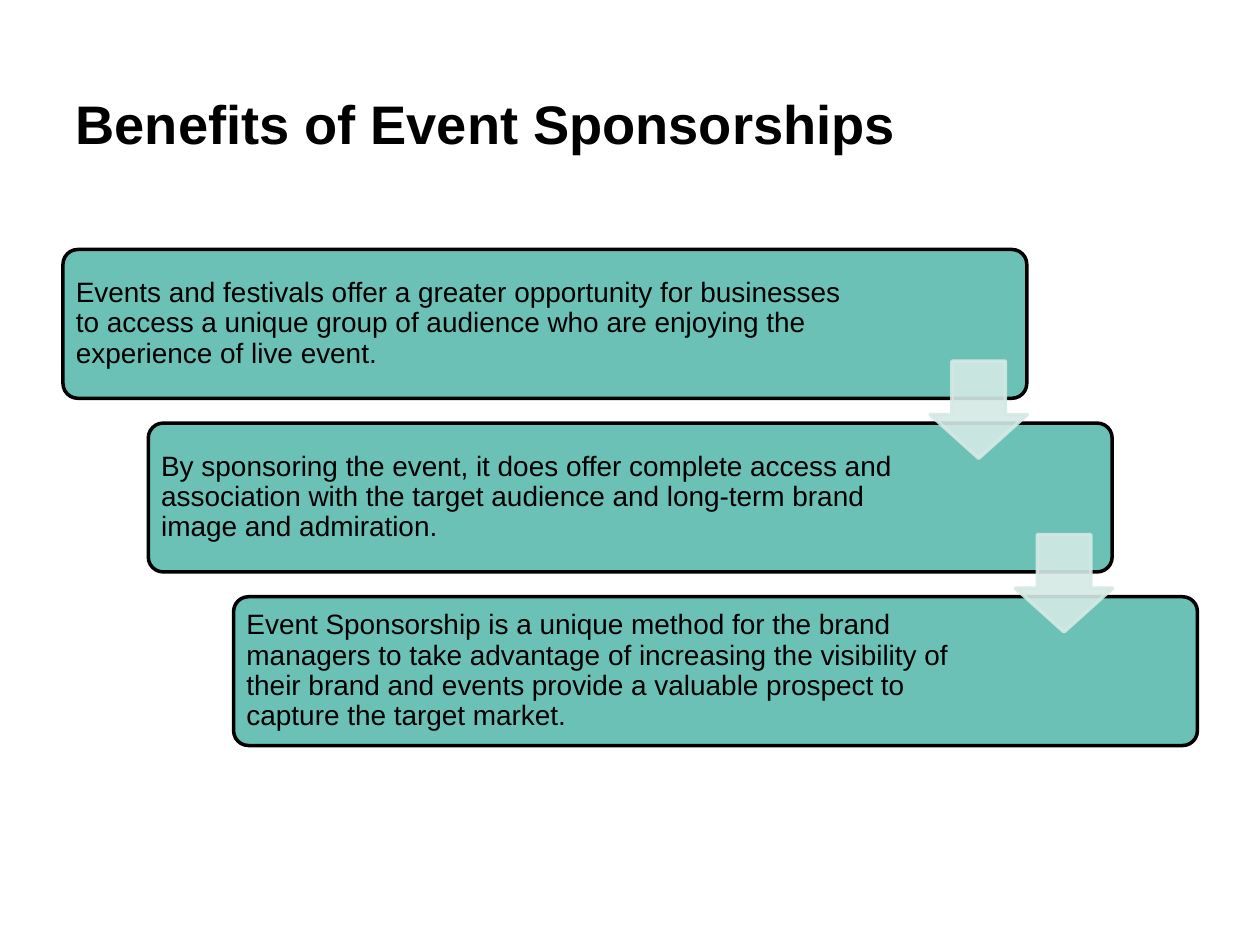
from dataclasses import dataclass

from lxml import etree
from pptx import Presentation
from pptx.dml.color import RGBColor
from pptx.enum.shapes import MSO_SHAPE
from pptx.enum.text import MSO_ANCHOR, MSO_AUTO_SIZE, PP_ALIGN
from pptx.oxml.ns import qn
from pptx.util import Cm, Pt

ROUND = MSO_SHAPE.ROUNDED_RECTANGLE
DOWN = MSO_SHAPE.DOWN_ARROW
TOP = MSO_ANCHOR.TOP
MID = MSO_ANCHOR.MIDDLE
LEFT = PP_ALIGN.LEFT
NO_FIT = MSO_AUTO_SIZE.NONE

BLACK, TEAL, PALE = "000000", "6BC1B6", "D4E9E5"
STEP_X, STEP_Y = 1.72, 3.5
BOX_X, BOX_Y, BOX_W, BOX_H = 1.27, 5.03, 19.43, 3.0
ARROW_X, ARROW_Y, ARROW_D = 18.75, 7.28, 1.96
PAD = 0.09


@dataclass
class Step:
    text: str
    width: float


STEPS = [
    Step("Events and festivals offer a greater opportunity for businesses to "
         "access a unique group of audience who are enjoying the experience "
         "of live event.", 16.2),
    Step("By sponsoring the event, it does offer complete access and "
         "association with the target audience and long-term brand image "
         "and admiration.", 15.6),
    Step("Event Sponsorship is a unique method for the brand managers to take "
         "advantage of increasing the visibility of their brand and events "
         "provide a valuable prospect to capture the target market.", 15.6),
]


def color(code: str) -> RGBColor:
    return RGBColor.from_string(code)


def assign(item, values: dict) -> None:
    for name, value in values.items():
        setattr(item, name, value)


def write(shape, text: str, size: float, bold: bool, after: float, frame: dict) -> None:
    body = shape.text_frame
    body.text = text
    assign(body, {"word_wrap": True, "auto_size": NO_FIT, **frame})
    para = body.paragraphs[0]
    assign(para, {"alignment": LEFT, "line_spacing": 0.9,
                  "space_before": Pt(0), "space_after": Pt(after)})
    font = para.runs[0].font
    assign(font, {"name": "Arial", "size": Pt(size), "bold": bold})
    font.color.rgb = color(BLACK)


def draw(slide, kind, box: tuple, fill: str, line: str, adjust: tuple):
    shape = slide.shapes.add_shape(kind, *map(Cm, box))
    shape.shadow.inherit = False
    shape.fill.solid()
    shape.fill.fore_color.rgb = color(fill)
    shape.line.color.rgb = color(line)
    shape.line.width = Pt(2)
    for i, value in enumerate(adjust):
        shape.adjustments[i] = value
    return shape


def add_step(slide, step: Step, i: int) -> None:
    x, y = BOX_X + i * STEP_X, BOX_Y + i * STEP_Y
    draw(slide, ROUND, (x, y, BOX_W, BOX_H), TEAL, BLACK, (0.1,))
    area = (x + PAD, y + PAD, step.width, BOX_H - 2 * PAD)
    label = slide.shapes.add_textbox(*map(Cm, area))
    sides = ("left", "right", "top", "bottom")
    frame = {f"margin_{side}": Cm(0.17) for side in sides}
    write(label, step.text, 16, False, 0, {"vertical_anchor": MID, **frame})


def add_arrow(slide, i: int) -> None:
    box = (ARROW_X + i * STEP_X, ARROW_Y + i * STEP_Y, ARROW_D, ARROW_D)
    arrow = draw(slide, DOWN, box, PALE, PALE, (0.55, 0.45))
    for tint in arrow.element.spPr.iter(qn("a:srgbClr")):
        etree.SubElement(tint, qn("a:alpha"), val="90000")


def main() -> None:
    deck = Presentation()
    assign(deck, {"slide_width": Cm(25.4), "slide_height": Cm(19.05)})
    slide = deck.slides.add_slide(deck.slide_layouts[5])
    title = slide.shapes.title
    assign(title, {"left": Cm(1.27), "top": Cm(1.85),
                   "width": Cm(22.86), "height": Cm(2.67)})
    write(title, "Benefits of Event Sponsorships", 31, True, 8,
          {"vertical_anchor": TOP})
    for i, step in enumerate(STEPS):
        add_step(slide, step, i)
    for i in range(len(STEPS) - 1):
        add_arrow(slide, i)
    deck.save("out.pptx")


if __name__ == "__main__":
    main()
